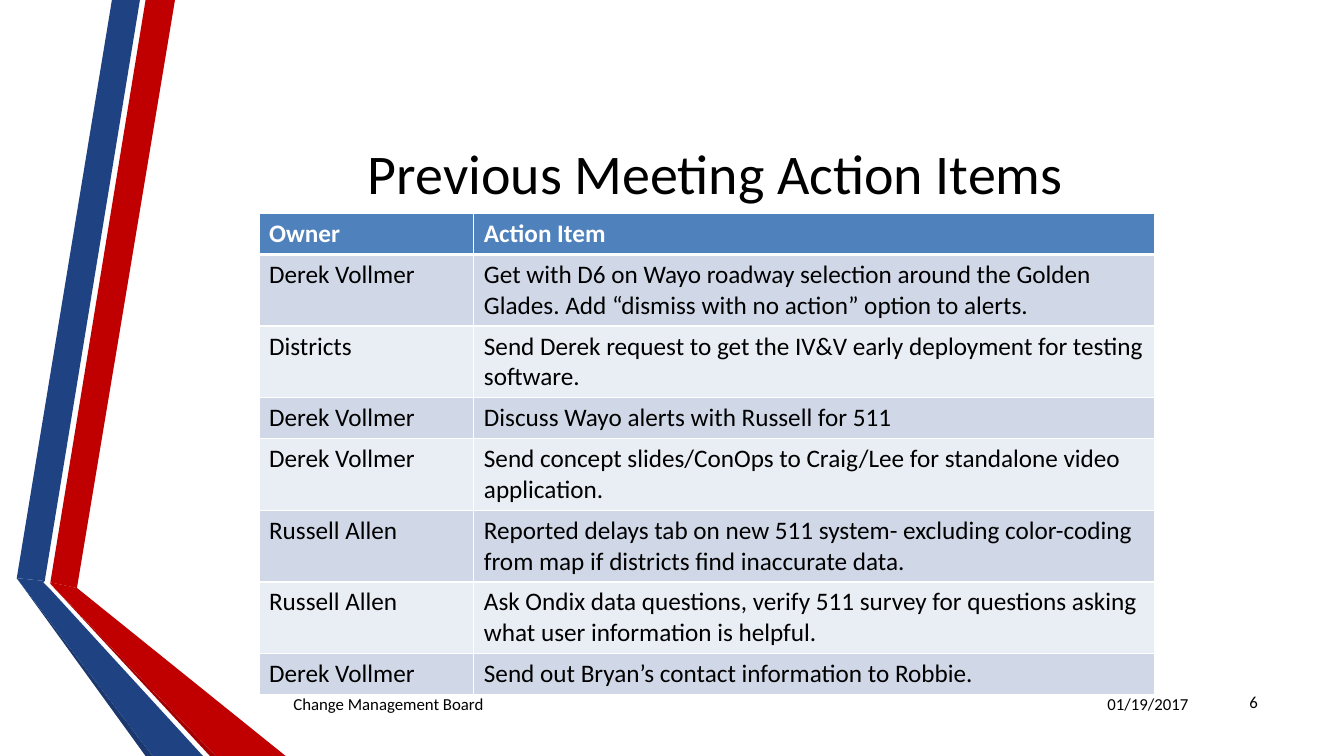
import lxml.etree
import pptx
import pptx.dml.color
import pptx.enum.text
import pptx.oxml.ns
import pptx.util

Pt = pptx.util.Pt
ALIGN = pptx.enum.text.PP_ALIGN
MIDDLE = pptx.enum.text.MSO_ANCHOR.MIDDLE
qn = pptx.oxml.ns.qn

FONT = "Calibri"
COLORS = {
    "text": "000000",
    "white": "FFFFFF",
    "red": "C00000",
    "red_edge": "A40000",
    "blue": "1F4283",
    "blue_edge": "1B396F",
    "header": "4F81BD",
    "odd_row": "D0D8E8",
    "even_row": "E9EDF4",
}
RIBBONS = [
    ("red", [(36, 416.2), (55.4, 419.8), (124.6, 0), (104.4, 0)]),
    ("blue", [(100.1, 0), (79.9, 0), (11.5, 412.6), (31.7, 415.4)]),
    ("blue_edge", [(11.5, 412.6), (104.4, 540), (108.7, 540)]),
    ("red_edge", [(36, 416.9), (149.8, 540), (154.1, 540)]),
    ("red", [(36, 416.2), (36, 416.9), (154.1, 540), (203.8, 540), (55.4, 419.8)]),
    ("blue", [(145.4, 540), (34.6, 419.8), (31, 416.2), (31.7, 415.4),
              (11.5, 412.6), (108.7, 540)]),
]
LINE_HEIGHT = 22
CELL_PADDING = 7.2
ACTION_ITEMS = [
    ("Owner", "Action Item", 1),
    ("Derek Vollmer", "Get with D6 on Wayo roadway selection around the Golden Glades. "
     "Add “dismiss with no action” option to alerts.", 2),
    ("Districts", "Send Derek request to get the IV&V early deployment for testing software.", 2),
    ("Derek Vollmer", "Discuss Wayo alerts with Russell for 511", 1),
    ("Derek Vollmer", "Send concept slides/ConOps to Craig/Lee for standalone video application.", 2),
    ("Russell Allen", "Reported delays tab on new 511 system- excluding color-coding "
     "from map if districts find inaccurate data.", 2),
    ("Russell Allen", "Ask Ondix data questions, verify 511 survey for questions asking "
     "what user information is helpful.", 2),
    ("Derek Vollmer", "Send out Bryan’s contact information to Robbie.", 1),
]


def rgb(name):
    """Return the named colour."""
    return pptx.dml.color.RGBColor.from_string(COLORS[name])


def write(frame, text, size, color="text", align=ALIGN.LEFT, bold=False):
    """Put one formatted paragraph in a text frame."""
    frame.text = text
    paragraph = frame.paragraphs[0]
    paragraph.alignment = align
    paragraph.font.name = FONT
    paragraph.font.size = Pt(size)
    paragraph.font.bold = bold
    paragraph.font.color.rgb = rgb(color)


def add_ribbons(slide, left, top):
    """Draw the folded ribbons from the given corner."""
    for color, points in RIBBONS:
        outline = slide.shapes.build_freeform(*points[0], scale=Pt(1))
        outline.add_line_segments(points[1:], close=True)
        ribbon = outline.convert_to_shape(Pt(left), Pt(top))
        ribbon.shadow.inherit = False
        ribbon.fill.solid()
        ribbon.fill.fore_color.rgb = rgb(color)
        ribbon.line.fill.background()


def add_title(slide, left, top, width, height):
    """Place the slide title in its box."""
    title = slide.shapes.title
    title.left, title.top = Pt(left), Pt(top)
    title.width, title.height = Pt(width), Pt(height)
    title.text_frame.vertical_anchor = MIDDLE
    write(title.text_frame, "Previous Meeting Action Items", 40, align=ALIGN.CENTER)


def add_footer(slide, left, top, width, height):
    """Place meeting name, date and page number along the footer box."""
    number_width, date_width, gap = 43, 90, 6.5
    number_left = left + width - number_width
    date_left = number_left - gap - date_width
    for text, x, y, part_width, align in [
        ("Change Management Board", left, top, date_left - gap - left, ALIGN.LEFT),
        ("01/19/2017", date_left, top, date_width, ALIGN.RIGHT),
        ("6", number_left, top - 1.5, number_width, ALIGN.RIGHT),
    ]:
        label = slide.shapes.add_textbox(Pt(x), Pt(y), Pt(part_width), Pt(height))
        label.text_frame.word_wrap = True
        label.text_frame.vertical_anchor = MIDDLE
        write(label.text_frame, text, 12, align=align)


def add_borders(cell, bottom):
    """Outline a cell in white, with its own bottom width."""
    properties = cell._tc.get_or_add_tcPr()
    for index, (side, width) in enumerate([("L", 1), ("R", 1), ("T", 1), ("B", bottom)]):
        border = lxml.etree.Element(qn(f"a:ln{side}"), w=str(Pt(width)))
        fill = lxml.etree.SubElement(border, qn("a:solidFill"))
        lxml.etree.SubElement(fill, qn("a:srgbClr"), val=COLORS["white"])
        properties.insert(index, border)


def add_action_table(slide, left, top, width, owner_width):
    """Place the table of owners and action items."""
    heights = [CELL_PADDING + lines * LINE_HEIGHT for *_, lines in ACTION_ITEMS]
    table = slide.shapes.add_table(len(ACTION_ITEMS), 2, Pt(left), Pt(top),
                                   Pt(width), Pt(sum(heights))).table
    table.columns[0].width = Pt(owner_width)
    table.columns[1].width = Pt(width - owner_width)
    for row, (owner, action, _) in enumerate(ACTION_ITEMS):
        table.rows[row].height = Pt(heights[row])
        header = row == 0
        fill = "header" if header else "odd_row" if row % 2 else "even_row"
        for column, text in enumerate((owner, action)):
            cell = table.cell(row, column)
            cell.fill.solid()
            cell.fill.fore_color.rgb = rgb(fill)
            add_borders(cell, 3 if header else 1)
            write(cell.text_frame, text, 18, "white" if header else "text", bold=header)


def main():
    """Build and save the slide."""
    deck = pptx.Presentation()
    deck.slide_width, deck.slide_height = Pt(960), Pt(540)
    slide = deck.slides.add_slide(deck.slide_layouts[5])
    add_ribbons(slide, 0, 0)
    add_title(slide, 116.5, 54, 789, 138)
    add_footer(slide, 202.5, 488.5, 703, 28.8)
    add_action_table(slide, 185, 152.5, 639.5, 153.5)
    deck.save("out.pptx")


if __name__ == "__main__":
    main()
